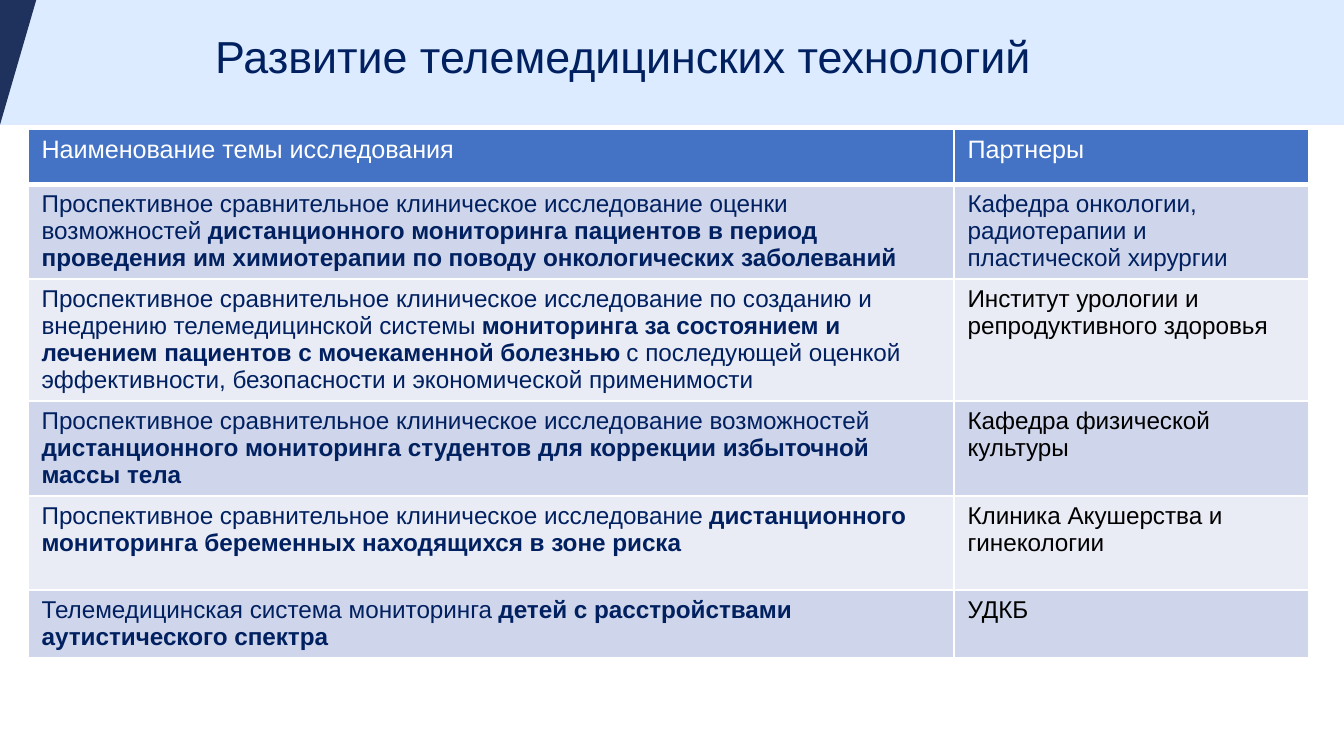
from dataclasses import dataclass

from lxml import etree
from pptx import Presentation
from pptx.dml.color import RGBColor
from pptx.enum import shapes, text
from pptx.oxml import ns
from pptx.util import Inches, Pt

NAVY, WHITE, BLACK = "002060", "FFFFFF", "000000"
HEADER_FILL = "4472C4"
BAND_FILLS = ("CFD5EA", "E9EBF5")
FONT = "Arial"
SLIDE_WIDTH = Inches(10)
SLIDE_HEIGHT = SLIDE_WIDTH * 9 // 16
BAND_HEIGHT = Inches(0.93)


@dataclass
class Study:
    """One table row; the topic alternates plain and bold pieces."""
    topic: tuple[str, ...]
    partner: str
    height: float
    partner_color: str = BLACK


HEADINGS = ("Наименование темы исследования", "Партнеры")
COLUMN_WIDTHS = (6.89, 2.64)
HEADER_HEIGHT = 0.41
STUDIES = (
    Study(("Проспективное сравнительное клиническое исследование оценки возможностей ",
           "дистанционного мониторинга пациентов в период проведения им химиотерапии "
           "по поводу онкологических заболеваний"),
          "Кафедра онкологии, радиотерапии и пластической хирургии", 0.7, NAVY),
    Study(("Проспективное сравнительное клиническое исследование по созданию и "
           "внедрению телемедицинской системы ",
           "мониторинга за состоянием и лечением пациентов с мочекаменной болезнью ",
           "с последующей оценкой эффективности, безопасности и экономической применимости"),
          "Институт урологии и репродуктивного здоровья", 0.91),
    Study(("Проспективное сравнительное клиническое исследование возможностей ",
           "дистанционного мониторинга студентов для коррекции избыточной массы тела"),
          "Кафедра физической культуры", 0.7),
    Study(("Проспективное сравнительное клиническое исследование ",
           "дистанционного мониторинга беременных находящихся в зоне риска"),
          "Клиника Акушерства и гинекологии", 0.7),
    Study(("Телемедицинская система мониторинга ",
           "детей с расстройствами аутистического спектра"),
          "УДКБ", 0.5),
)


def paint(fill, color: str) -> None:
    fill.solid()
    fill.fore_color.rgb = RGBColor.from_string(color)


def style(paragraph, size: float, color: str) -> None:
    font = paragraph.font
    font.name, font.size = FONT, Pt(size)
    font.color.rgb = RGBColor.from_string(color)


def finish_shape(shape, color: str) -> None:
    paint(shape.fill, color)
    shape.line.fill.background()
    shape.shadow.inherit = False


def add_borders(cell, bottom: float = 1) -> None:
    properties = cell._tc.get_or_add_tcPr()
    for side, width in (("L", 1), ("R", 1), ("T", 1), ("B", bottom)):
        line = etree.SubElement(properties, ns.qn(f"a:ln{side}"), w=str(Pt(width)))
        solid = etree.SubElement(line, ns.qn("a:solidFill"))
        etree.SubElement(solid, ns.qn("a:srgbClr"), val=WHITE)


def fill_cell(cell, pieces: tuple[str, ...], size: float, color: str, fill: str) -> None:
    """Write pieces into the cell, every second one bold."""
    paragraph = cell.text_frame.paragraphs[0]
    for index, piece in enumerate(pieces):
        run = paragraph.add_run()
        run.text = piece
        run.font.bold = index % 2 == 1
    style(paragraph, size, color)
    paint(cell.fill, fill)


def add_header_band(slide) -> None:
    band = slide.shapes.add_shape(shapes.MSO_SHAPE.RECTANGLE, 0, 0,
                                  SLIDE_WIDTH, BAND_HEIGHT)
    finish_shape(band, "DCEBFF")
    wedge = slide.shapes.build_freeform(0, 0)
    wedge.add_line_segments([(Inches(0.27), 0), (0, BAND_HEIGHT)], close=True)
    finish_shape(wedge.convert_to_shape(), "1F325E")


def add_title(slide, title: str) -> None:
    box = slide.shapes.add_textbox(Inches(0.69), Inches(0.19), Inches(7.89), Inches(0.5))
    frame = box.text_frame
    frame.word_wrap = True
    frame.vertical_anchor = text.MSO_ANCHOR.MIDDLE
    paragraph = frame.paragraphs[0]
    paragraph.text = title
    paragraph.alignment = text.PP_ALIGN.CENTER
    paragraph.line_spacing = 0.9
    style(paragraph, 24, NAVY)


def add_study_table(slide) -> None:
    heights = [HEADER_HEIGHT] + [study.height for study in STUDIES]
    table = slide.shapes.add_table(
        len(heights), len(COLUMN_WIDTHS), Inches(0.21), Inches(0.96),
        Inches(sum(COLUMN_WIDTHS)), Inches(sum(heights))).table
    for column, width in zip(table.columns, COLUMN_WIDTHS):
        column.width = Inches(width)
    for row, height in zip(table.rows, heights):
        row.height = Inches(height)

    for column, heading in enumerate(HEADINGS):
        cell = table.cell(0, column)
        add_borders(cell, bottom=3)
        fill_cell(cell, (heading,), 13.5, WHITE, HEADER_FILL)
    for row, study in enumerate(STUDIES, start=1):
        fill = BAND_FILLS[(row - 1) % 2]
        contents = ((study.topic, NAVY), ((study.partner,), study.partner_color))
        for column, (pieces, color) in enumerate(contents):
            cell = table.cell(row, column)
            add_borders(cell)
            fill_cell(cell, pieces, 13, color, fill)


def main() -> None:
    deck = Presentation()
    deck.slide_width, deck.slide_height = SLIDE_WIDTH, SLIDE_HEIGHT
    slide = deck.slides.add_slide(deck.slide_layouts[6])
    add_header_band(slide)
    add_study_table(slide)
    add_title(slide, "Развитие телемедицинских технологий")
    deck.save("out.pptx")


if __name__ == "__main__":
    main()
